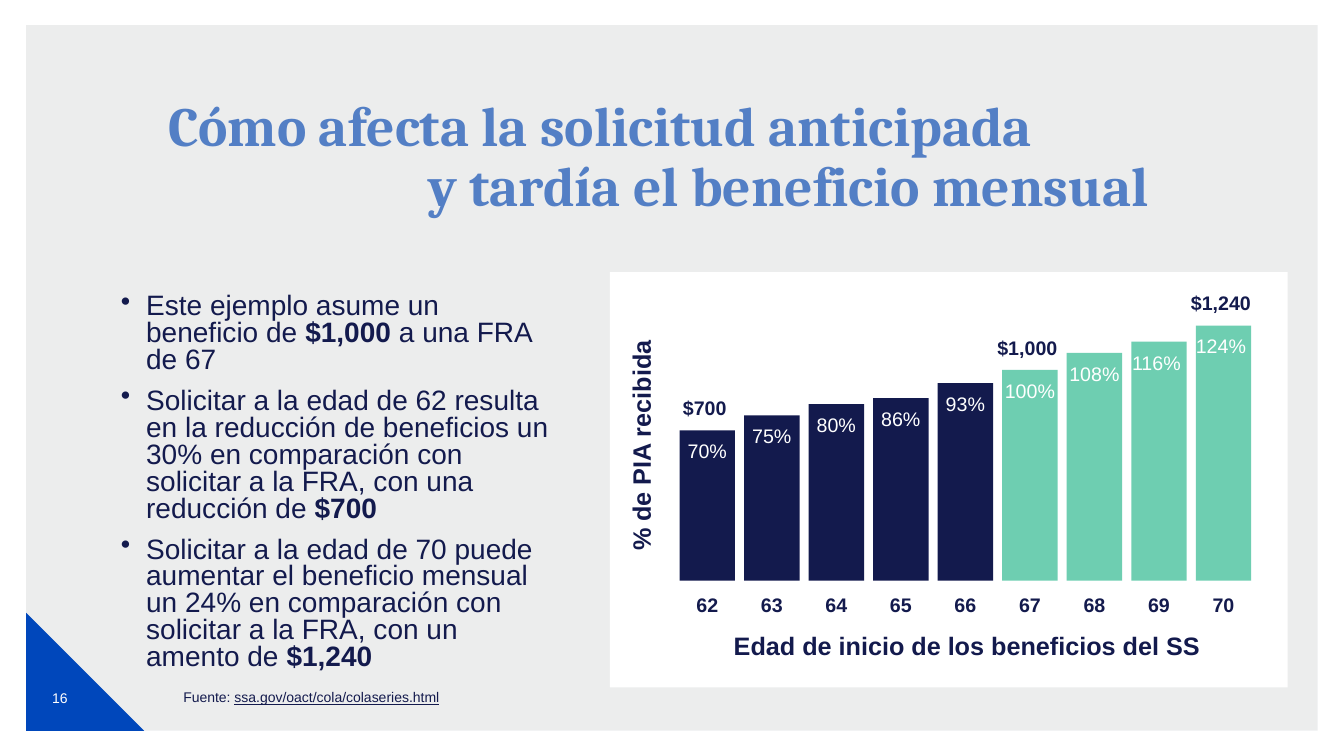
import pptx
import pptx.util
import pptx.dml.color
import pptx.enum.shapes
import pptx.enum.text
import pptx.oxml
import pptx.oxml.ns

Inches = pptx.util.Inches
Pt = pptx.util.Pt
Shape = pptx.enum.shapes.MSO_SHAPE
Align = pptx.enum.text.PP_ALIGN
Anchor = pptx.enum.text.MSO_ANCHOR

NAVY, BLUE, MINT, GREY, WHITE = "131A4D", "0047BB", "6ECEB1", "D0D3D4", "FFFFFF"

# Age, share, bar top, share label width, amount
BARS = [
    (62, 70, 4.27, 0.55, "$700"),
    (63, 75, 4.12, 0.55, ""),
    (64, 80, 4.01, 0.55, ""),
    (65, 86, 3.95, 0.55, ""),
    (66, 93, 3.8, 0.55, ""),
    (67, 100, 3.67, 0.55, "$1,000"),
    (68, 108, 3.5, 0.55, ""),
    (69, 116, 3.39, 0.5, ""),
    (70, 124, 3.23, 0.5, "$1,240"),
]
FIRST, STEP, WIDTH, BASE = 6.74, 0.64, 0.55, 5.76

# Each point is a list of (text, bold) runs
POINTS = [
    [("Este ejemplo asume un beneficio de ", False), ("$1,000 ", True),
     ("a una FRA de 67", False)],
    [("Solicitar a la edad de 62 resulta en la reducción de beneficios un 30% "
      "en comparación con solicitar a la FRA, con una reducción de ", False),
     ("$700", True)],
    [("Solicitar a la edad de 70 puede aumentar el beneficio mensual un 24% "
      "en comparación con solicitar a la FRA, con un amento de ", False),
     ("$1,240", True)],
]


def color(code):
    return pptx.dml.color.RGBColor.from_string(code)


def assign(target, values):
    for name, value in values.items():
        setattr(target, name, value)


def style(font, size, code, **extra):
    assign(font, {"name": "Arial", "size": Pt(size), **extra})
    font.color.rgb = color(code)


def frame(shape, anchor=Anchor.TOP, side=0.1, edge=0.05):
    text = shape.text_frame
    assign(text, {
        "word_wrap": True, "vertical_anchor": anchor,
        "auto_size": pptx.enum.text.MSO_AUTO_SIZE.NONE,
        "margin_left": Inches(side), "margin_right": Inches(side),
        "margin_top": Inches(edge), "margin_bottom": Inches(edge),
    })
    return text


def block(slide, kind, box, code, alpha=None):
    shape = slide.shapes.add_shape(kind, *map(Inches, box))
    shape.shadow.inherit = False
    shape.fill.solid()
    shape.fill.fore_color.rgb = color(code)
    shape.line.fill.background()
    if alpha:
        tone = shape.fill._xPr.find(".//" + pptx.oxml.ns.qn("a:srgbClr"))
        tone.append(pptx.oxml.parse_xml(
            f'<a:alpha {pptx.oxml.ns.nsdecls("a")} val="{alpha * 1000}"/>'))


def label(slide, box, words, size, code=NAVY, bold=False, turn=0, **inner):
    shape = slide.shapes.add_textbox(*map(Inches, box))
    shape.rotation = turn
    para = frame(shape, **inner).paragraphs[0]
    para.text = words
    para.alignment = Align.CENTER
    style(para.runs[0].font, size, code, bold=bold)


def indent(para, left, first):
    props = para._p.get_or_add_pPr()
    props.set("marL", str(Inches(left)))
    props.set("indent", str(Inches(first)))
    return props


def heading(slide):
    title = slide.shapes.title
    assign(title, {"left": Inches(1.63), "top": Inches(0.93),
                   "width": Inches(10.23), "height": Inches(1.47)})
    para = frame(title, side=0).paragraphs[0]
    para.text = "Cómo afecta la solicitud anticipada\vy tardía el beneficio mensual"
    # The hanging indent steps the second line to the right
    indent(para, 2.62, -2.58)
    assign(para, {"alignment": Align.LEFT, "line_spacing": 0.9})
    for run in para.runs:
        style(run.font, 39.6, BLUE, name="Cambria", bold=True)


def bullets(slide):
    shape = slide.shapes.add_textbox(*map(Inches, (1.2, 2.87, 4.3, 3.95)))
    text = frame(shape, side=0)
    for i, point in enumerate(POINTS):
        para = text.add_paragraph() if i else text.paragraphs[0]
        indent(para, 0.25, -0.25).append(pptx.oxml.parse_xml(
            f'<a:buChar {pptx.oxml.ns.nsdecls("a")} char="•"/>'))
        assign(para, {"line_spacing": 0.8, "space_before": Pt(10 if i else 0)})
        for words, bold in point:
            run = para.add_run()
            run.text = words
            style(run.font, 20, NAVY, bold=bold)


def bars(slide):
    for i, (age, share, top, span, amount) in enumerate(BARS):
        left = FIRST + i * STEP
        tone = NAVY if age < 67 else MINT
        block(slide, Shape.RECTANGLE, (left, top, WIDTH, BASE - top), tone)
        label(slide, (left, 5.83, WIDTH, 0.34), str(age), 14, bold=True)
        label(slide, (left, top + 0.08, span, 0.24), f"{share}%", 14, WHITE,
              anchor=Anchor.BOTTOM, side=0, edge=0)
        if amount:
            label(slide, (left - 0.2, top - 0.39, 0.9, 0.34), amount, 14, bold=True)


def source(slide):
    shape = slide.shapes.add_textbox(*map(Inches, (1.72, 6.78, 10.83, 0.27)))
    para = frame(shape).paragraphs[0]
    for words, line in (("Fuente: ", False),
                        ("ssa.gov/oact/cola/colaseries.html", True)):
        run = para.add_run()
        run.text = words
        style(run.font, 10, NAVY, underline=line)


def main():
    deck = pptx.Presentation()
    assign(deck, {"slide_width": Inches(13.33), "slide_height": Inches(7.5)})
    slide = deck.slides.add_slide(deck.slide_layouts[5])

    # Backdrop and page number
    block(slide, Shape.RECTANGLE, (0.26, 0.25, 12.81, 7), GREY, alpha=40)
    block(slide, Shape.RIGHT_TRIANGLE, (0.26, 6.08, 1.17, 1.17), BLUE)
    label(slide, (0.32, 6.63, 0.55, 0.58), "16", 10, WHITE, anchor=Anchor.MIDDLE)

    # Title and points
    heading(slide)
    bullets(slide)

    # Benefit bars with axis titles
    block(slide, Shape.RECTANGLE, (6.05, 2.7, 6.72, 4.12), WHITE)
    bars(slide)
    label(slide, (4.8, 4.22, 3.11, 0.4), "% de PIA recibida", 18, bold=True, turn=270)
    label(slide, (6.75, 6.2, 5.68, 0.4), "Edad de inicio de los beneficios del SS",
          18, bold=True)

    source(slide)
    deck.save("out.pptx")


if __name__ == "__main__":
    main()
